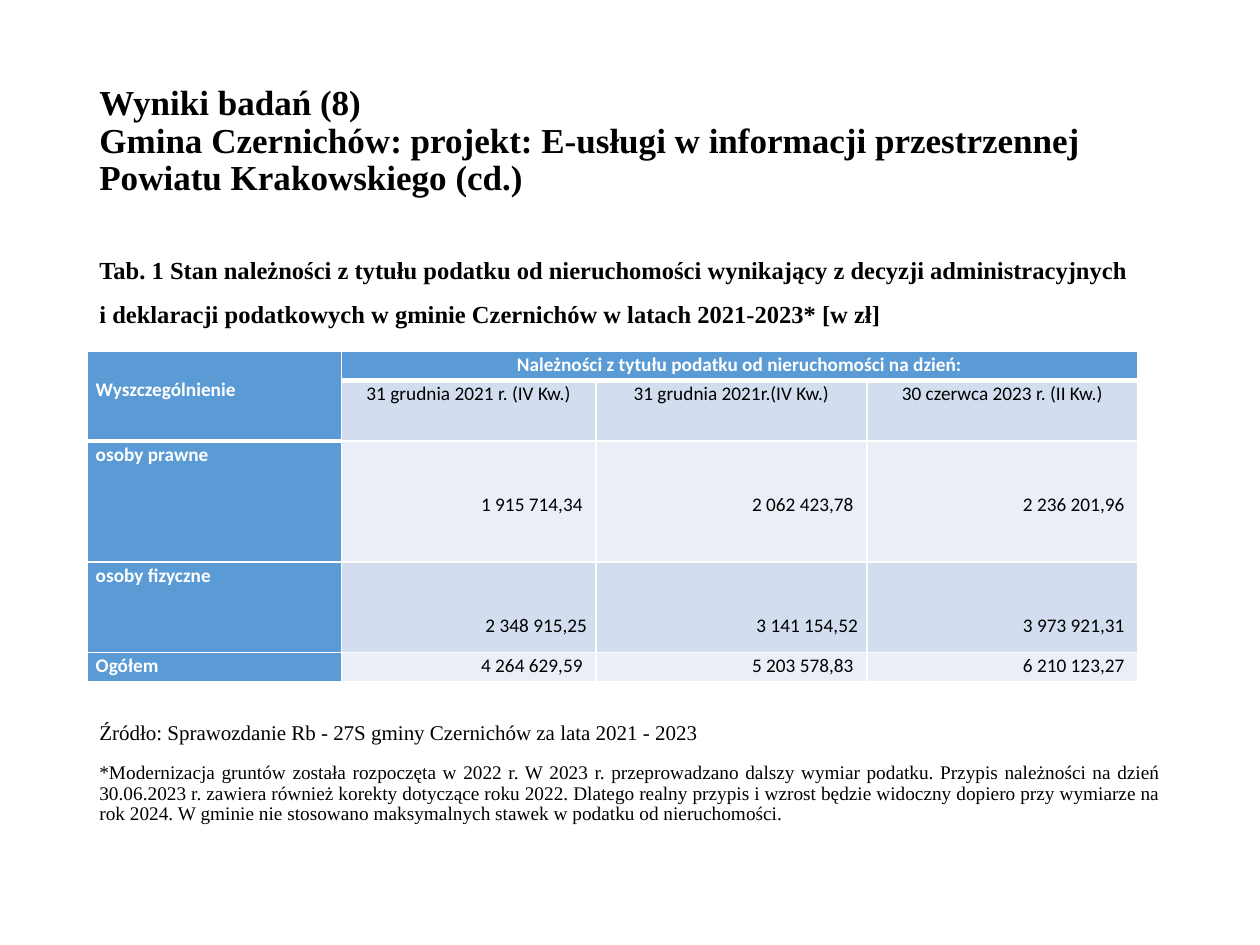
from dataclasses import dataclass

from lxml.etree import SubElement
from pptx import Presentation
from pptx.dml.color import RGBColor as RGB
from pptx.enum.text import MSO_ANCHOR as Anchor, PP_ALIGN as Align
from pptx.oxml.ns import qn
from pptx.util import Inches, Pt


@dataclass(frozen=True)
class Theme:
    serif: str = "Times New Roman"
    sans: str = "Calibri"
    black: str = "000000"
    white: str = "FFFFFF"
    header: str = "5B9BD5"
    bands: tuple[str, str] = ("EAEFF7", "D2DEEF")
    title: int = 20
    caption: int = 14
    source: int = 12
    small: int = 11


T = Theme()
LEFT, WIDTH = 0.69, 8.62
TABLE_TOP = 2.79
COLS = (2.02, 2.02, 2.15, 2.15)
ROWS = (0.23, 0.48, 0.96, 0.72, 0.23)
CELL_LINE = 0.2  # height of one text line in the table


@dataclass(frozen=True)
class Para:
    text: str
    size: int
    bold: bool = False
    align: Align = Align.LEFT
    before: float = 10
    spacing: float = 0.9
    font: str = T.serif
    color: str = T.black


@dataclass(frozen=True)
class Row:
    label: str
    values: tuple[str, str, str]
    lines_above: int = 0


TITLE = Para("Wyniki badań (8)\vGmina Czernichów: projekt: E-usługi w informacji "
             "przestrzennej Powiatu Krakowskiego (cd.)", T.title, bold=True, before=0)
BODY = (
    Para("Tab. 1 Stan należności z tytułu podatku od nieruchomości wynikający z decyzji "
         "administracyjnych ", T.caption, bold=True, align=Align.JUSTIFY),
    Para("i deklaracji podatkowych w gminie Czernichów w latach 2021-2023* [w zł]",
         T.caption, bold=True, align=Align.JUSTIFY),
    # The wide gap leaves room for the table.
    Para("Źródło: Sprawozdanie Rb - 27S gminy Czernichów za lata 2021 - 2023",
         T.source, before=225),
    Para("*Modernizacja gruntów została rozpoczęta w 2022 r. W 2023 r. przeprowadzano dalszy "
         "wymiar podatku. Przypis należności na dzień 30.06.2023 r. zawiera również korekty "
         "dotyczące roku 2022. Dlatego realny przypis i wzrost będzie widoczny dopiero przy "
         "wymiarze na rok 2024. W gminie nie stosowano maksymalnych stawek w podatku od "
         "nieruchomości.", T.small, align=Align.JUSTIFY),
)
DATES = ("31 grudnia 2021 r. (IV Kw.)", "31 grudnia 2021r.(IV Kw.)", "30 czerwca 2023 r. (II Kw.)")
DATA = (
    Row("osoby prawne", ("1 915 714,34 ", "2 062 423,78 ", "2 236 201,96 "), 2),
    Row("osoby fizyczne", ("2 348 915,25", "3 141 154,52", "3 973 921,31 "), 2),
    Row("Ogółem", ("4 264 629,59 ", "5 203 578,83 ", "6 210 123,27 ")),
)


def write(tf, paras) -> None:
    for i, para in enumerate(paras):
        p = tf.add_paragraph() if i else tf.paragraphs[0]
        p.text = para.text
        p.alignment, p.line_spacing = para.align, para.spacing
        p.space_before = Pt(para.before)
        for r in p.runs:
            r.font.name, r.font.size, r.font.bold = para.font, Pt(para.size), para.bold
            r.font.color.rgb = RGB.from_string(para.color)


def add_text(s, top: float, height: float, paras, anchor: Anchor) -> None:
    tf = s.shapes.add_textbox(*map(Inches, (LEFT, top, WIDTH, height))).text_frame
    tf.word_wrap, tf.vertical_anchor = True, anchor
    write(tf, paras)


def set_borders(cell, **widths: float) -> None:
    """Draw white cell edges; keys are L, R, T and B, in that order."""
    tc_pr = cell._tc.get_or_add_tcPr()
    for i, (side, width) in enumerate(widths.items()):
        ln = SubElement(tc_pr, qn(f"a:ln{side}"), w=str(Pt(width)))
        SubElement(SubElement(ln, qn("a:solidFill")), qn("a:srgbClr"), val=T.white)
        tc_pr.insert(i, ln)


def fill_cell(cell, text: str, fill: str, align: Align = Align.LEFT, lines_above: int = 0) -> None:
    is_header = fill == T.header
    cell.fill.solid()
    cell.fill.fore_color.rgb = RGB.from_string(fill)
    cell.margin_left = cell.margin_right = Inches(0.07)
    cell.margin_top, cell.margin_bottom = Inches(lines_above * CELL_LINE), 0
    write(cell.text_frame, [Para(text, T.small, is_header, align, 0, 1.07, T.sans,
                                 T.white if is_header else T.black)])


def add_tax_table(s) -> None:
    size = map(Inches, (LEFT, TABLE_TOP, sum(COLS), sum(ROWS)))
    table = s.shapes.add_table(len(ROWS), len(COLS), *size).table
    for col, width in zip(table.columns, COLS):
        col.width = Inches(width)
    for row, height in zip(table.rows, ROWS):
        row.height = Inches(height)

    table.cell(0, 0).merge(table.cell(1, 0))
    table.cell(0, 1).merge(table.cell(0, 3))
    fill_cell(table.cell(0, 0), "Wyszczególnienie", T.header, lines_above=1)
    fill_cell(table.cell(0, 1), "Należności z tytułu podatku od nieruchomości na dzień:",
              T.header, Align.CENTER)
    for c, date in enumerate(DATES, 1):
        fill_cell(table.cell(1, c), date, T.bands[1], Align.CENTER)
    for r, row in enumerate(DATA, 2):
        fill_cell(table.cell(r, 0), row.label, T.header)
        for c, value in enumerate(row.values, 1):
            fill_cell(table.cell(r, c), value, T.bands[r % 2], Align.RIGHT, row.lines_above)

    for r in range(len(ROWS)):
        for c in range(len(COLS)):
            ends_header = r == 0 or (r, c) == (1, 0)
            below_header = (r == 1 and c > 0) or (r, c) == (2, 0)
            set_borders(table.cell(r, c), L=1, R=1, T=3 if below_header else 1,
                        B=3 if ends_header else 1)


def main() -> None:
    prs = Presentation()
    prs.slide_width, prs.slide_height = Inches(10), Inches(7.5)
    s = prs.slides.add_slide(prs.slide_layouts[6])
    add_text(s, 0.4, 1.45, [TITLE], Anchor.MIDDLE)
    add_text(s, 2, 4.76, BODY, Anchor.TOP)
    add_tax_table(s)
    prs.save("out.pptx")


if __name__ == "__main__":
    main()
